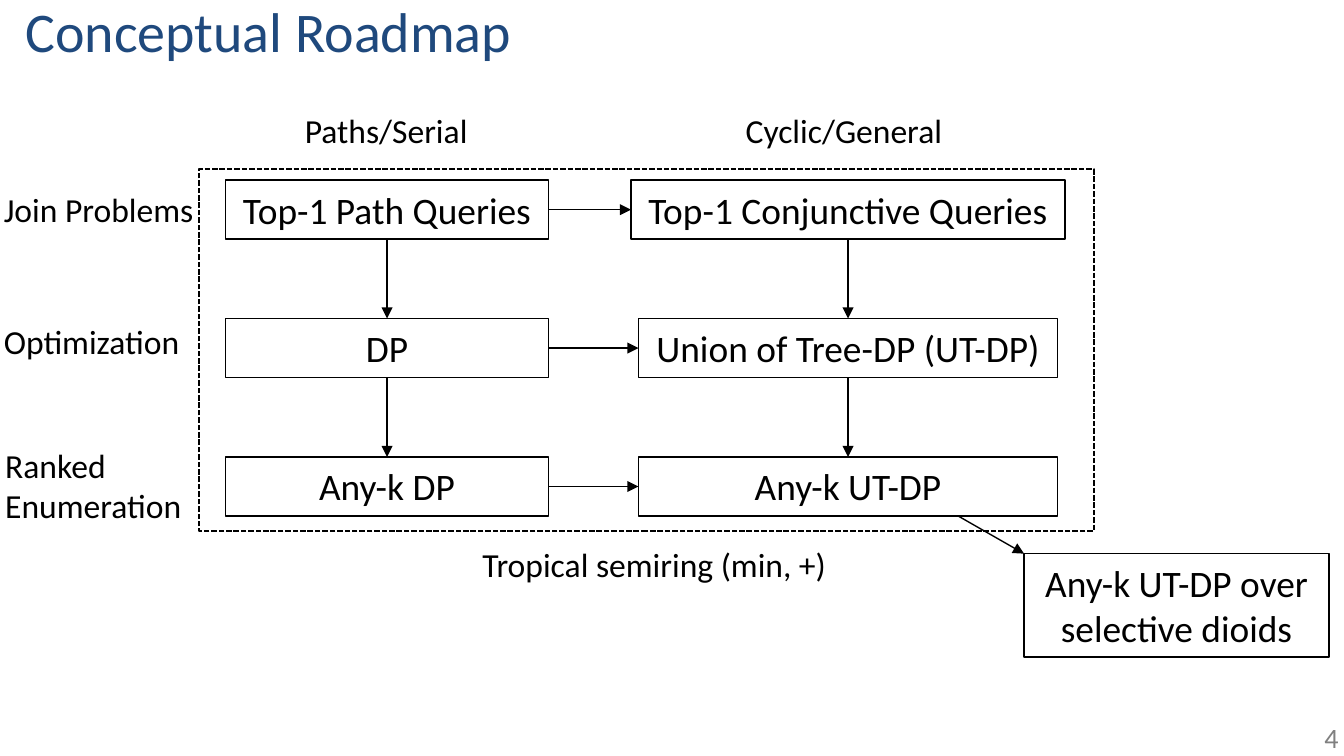
import pptx
import pptx.util
import pptx.dml.color
import pptx.enum.dml
import pptx.enum.shapes
import pptx.enum.text
import pptx.oxml
import pptx.oxml.ns

Inches, Pt = pptx.util.Inches, pptx.util.Pt
ALIGN = pptx.enum.text.PP_ALIGN
ANCHOR = pptx.enum.text.MSO_ANCHOR
RECTANGLE = pptx.enum.shapes.MSO_SHAPE.RECTANGLE
STRAIGHT = pptx.enum.shapes.MSO_CONNECTOR.STRAIGHT
TOP, LEFT, BOTTOM, RIGHT = range(4)

THEME = {
    "font": "Calibri",
    "color": {"title": "1F497D", "text": "000000", "number": "808080"},
    "size": {"title": 30, "box": 20, "label": 18, "number": 15},
    "line": 0.75,
    "frame_line": 1,
}

# Content
TITLE = "Conceptual Roadmap"
SLIDE_NUMBER = "4"
STEPS = [  # one row per level: (paths, general, width of the general box)
    ("Top-1 Path Queries", "Top-1 Conjunctive Queries", 3.23),
    ("DP", "Union of Tree-DP (UT-DP)", 3.12),
    ("Any-k DP", "Any-k UT-DP", 3.12),
]
EXTENSION = "Any-k UT-DP over selective dioids"
LABELS = [  # text, wrap, left, top, width, height
    ("Paths/Serial", False, 2.17, 0.77, 1.41, 0.4),
    ("Cyclic/General", False, 5.45, 0.77, 1.67, 0.4),
    ("Join Problems", False, -0.07, 1.36, 1.61, 0.4),
    ("Optimization", False, -0.07, 2.34, 1.51, 0.4),
    ("Ranked Enumeration", True, -0.06, 3.26, 1.51, 0.71),
    ("Tropical semiring (min, +)", False, 3.49, 4, 2.79, 0.4),
]

# Grid
SLIDE_WIDTH = 10
SLIDE_HEIGHT = SLIDE_WIDTH * 9 / 16
COLUMN_CENTERS = (2.88, 6.31)
PATH_WIDTH = 2.4
FIRST_ROW, ROW_PITCH, BOX_HEIGHT = 1.34, 1.03, 0.44
FRAME = (1.48, 1.26, 6.66, 2.69)
EXTENSION_AREA = (7.62, 4.12, 2.27, 0.77)
EXTENSION_START = 7.13


def inches(*values):
    return [Inches(value) for value in values]


def rgb(role):
    return pptx.dml.color.RGBColor.from_string(THEME["color"][role])


def write(shape, text, size, color="text", align=ALIGN.LEFT, wrap=True, inset=None):
    frame = shape.text_frame
    frame.text = text
    settings = {"word_wrap": wrap, "vertical_anchor": ANCHOR.TOP,
                "auto_size": pptx.enum.text.MSO_AUTO_SIZE.NONE}
    if inset is not None:
        settings.update({f"margin_{side}": Inches(inset)
                         for side in ("left", "top", "right", "bottom")})
    for name, value in settings.items():
        setattr(frame, name, value)
    paragraph = frame.paragraphs[0]
    paragraph.alignment = align
    font = paragraph.runs[0].font
    for name, value in {"name": THEME["font"], "size": Pt(THEME["size"][size])}.items():
        setattr(font, name, value)
    font.color.rgb = rgb(color)
    return paragraph


def add_outline(slide, area, width):
    shape = slide.shapes.add_shape(RECTANGLE, *inches(*area))
    shape.shadow.inherit = False
    shape.fill.background()
    shape.line.color.rgb = rgb("text")
    shape.line.width = Pt(width)
    return shape


def add_box(slide, text, area, wrap=False):
    box = add_outline(slide, area, THEME["line"])
    write(box, text, "box", align=ALIGN.CENTER, wrap=wrap)
    return box


def add_arrow(slide, start, end):
    arrow = slide.shapes.add_connector(STRAIGHT, *inches(*start, *end))
    arrow.line.color.rgb = rgb("text")
    arrow.line.width = Pt(THEME["line"])
    properties = arrow._element.spPr
    outline = properties.find(pptx.oxml.ns.qn("a:ln"))
    namespace = pptx.oxml.ns.nsdecls("a")
    outline.append(pptx.oxml.parse_xml(f'<a:tailEnd {namespace} type="triangle"/>'))
    properties.append(pptx.oxml.parse_xml(f"<a:effectLst {namespace}/>"))
    return arrow


def join(slide, source, source_side, target, target_side):
    arrow = add_arrow(slide, (0, 0), (1, 1))
    arrow.begin_connect(source, source_side)
    arrow.end_connect(target, target_side)


def add_roadmap(slide):
    rows = []
    for index, (path_text, general_text, general_width) in enumerate(STEPS):
        top = FIRST_ROW + index * ROW_PITCH
        rows.append([
            add_box(slide, text, (center - width / 2, top, width, BOX_HEIGHT))
            for text, center, width in zip(
                (path_text, general_text), COLUMN_CENTERS, (PATH_WIDTH, general_width))
        ])
    add_box(slide, EXTENSION, EXTENSION_AREA, wrap=True)

    for path_box, general_box in rows:
        join(slide, path_box, RIGHT, general_box, LEFT)
    for upper_row, lower_row in zip(rows, rows[1:]):
        for upper, lower in zip(upper_row, lower_row):
            join(slide, upper, BOTTOM, lower, TOP)
    last_bottom = FIRST_ROW + (len(STEPS) - 1) * ROW_PITCH + BOX_HEIGHT
    add_arrow(slide, (EXTENSION_START, last_bottom), EXTENSION_AREA[:2])

    frame = add_outline(slide, FRAME, THEME["frame_line"])
    frame.line.dash_style = pptx.enum.dml.MSO_LINE.SQUARE_DOT


def main():
    presentation = pptx.Presentation()
    presentation.slide_width, presentation.slide_height = inches(SLIDE_WIDTH, SLIDE_HEIGHT)
    slide = presentation.slides.add_slide(presentation.slide_layouts[5])

    title = slide.shapes.title
    title.left, title.top, title.width, title.height = inches(0.19, 0.05, 3.62, 0.43)
    paragraph = write(title, TITLE, "title", "title", wrap=False, inset=0)
    paragraph.line_spacing = 0.85

    add_roadmap(slide)
    for text, wrap, *area in LABELS:
        label = slide.shapes.add_textbox(*inches(*area))
        write(label, text, "label", wrap=wrap)

    number = slide.shapes.add_textbox(*inches(9.71, 5.36, 0.25, 0.25))
    write(number, SLIDE_NUMBER, "number", "number", ALIGN.RIGHT, wrap=False, inset=0)
    presentation.save("out.pptx")


if __name__ == "__main__":
    main()
